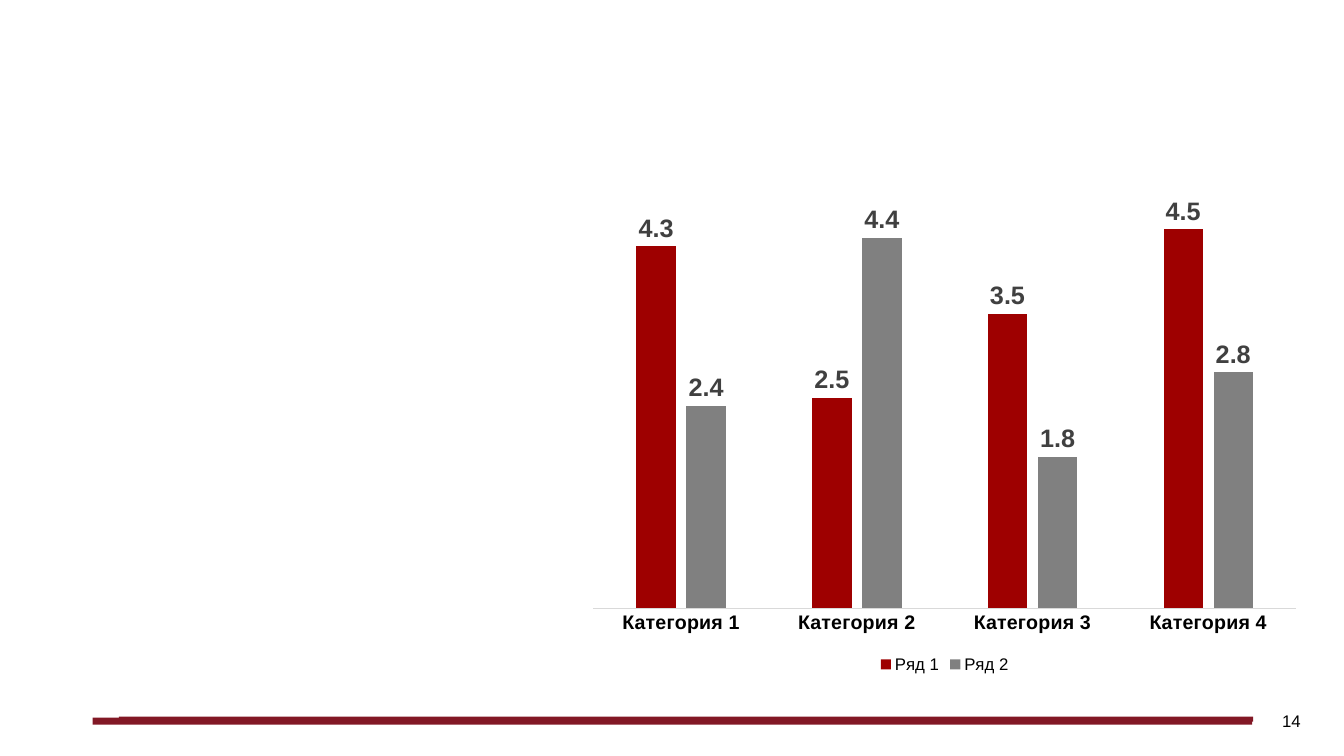
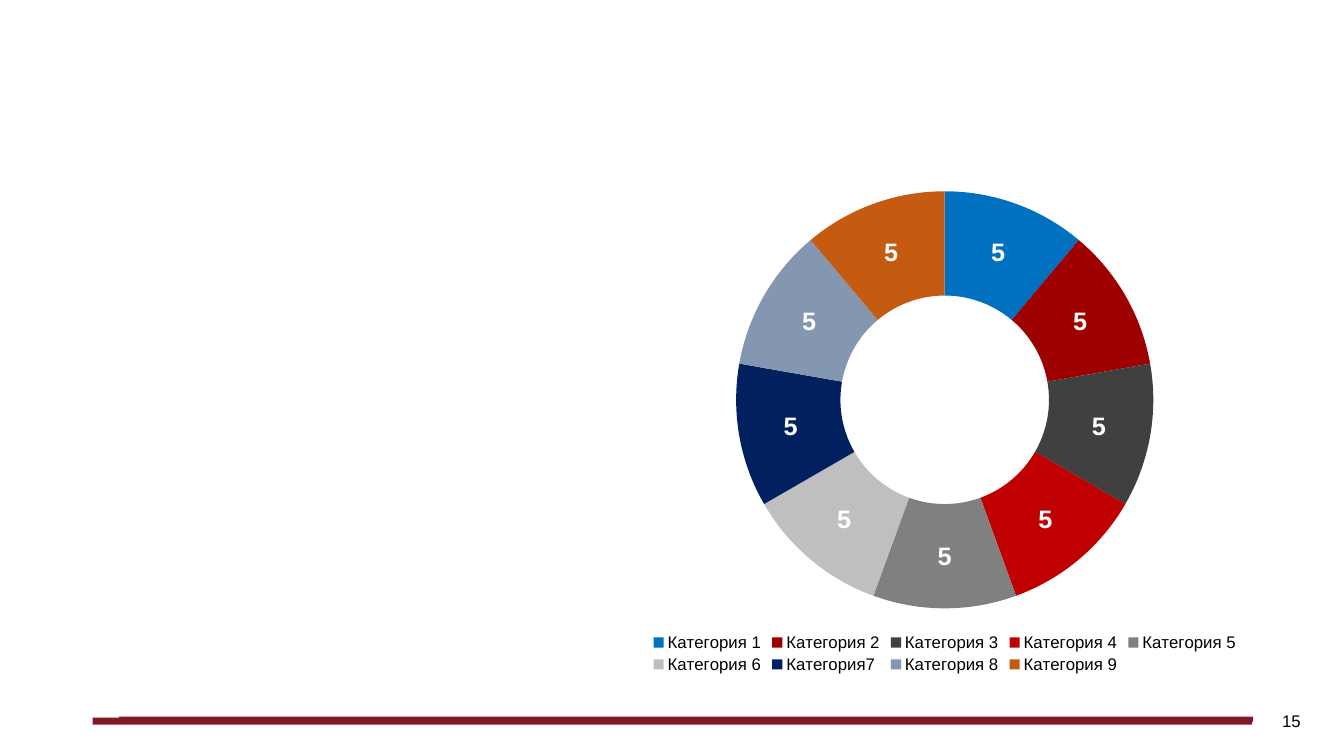
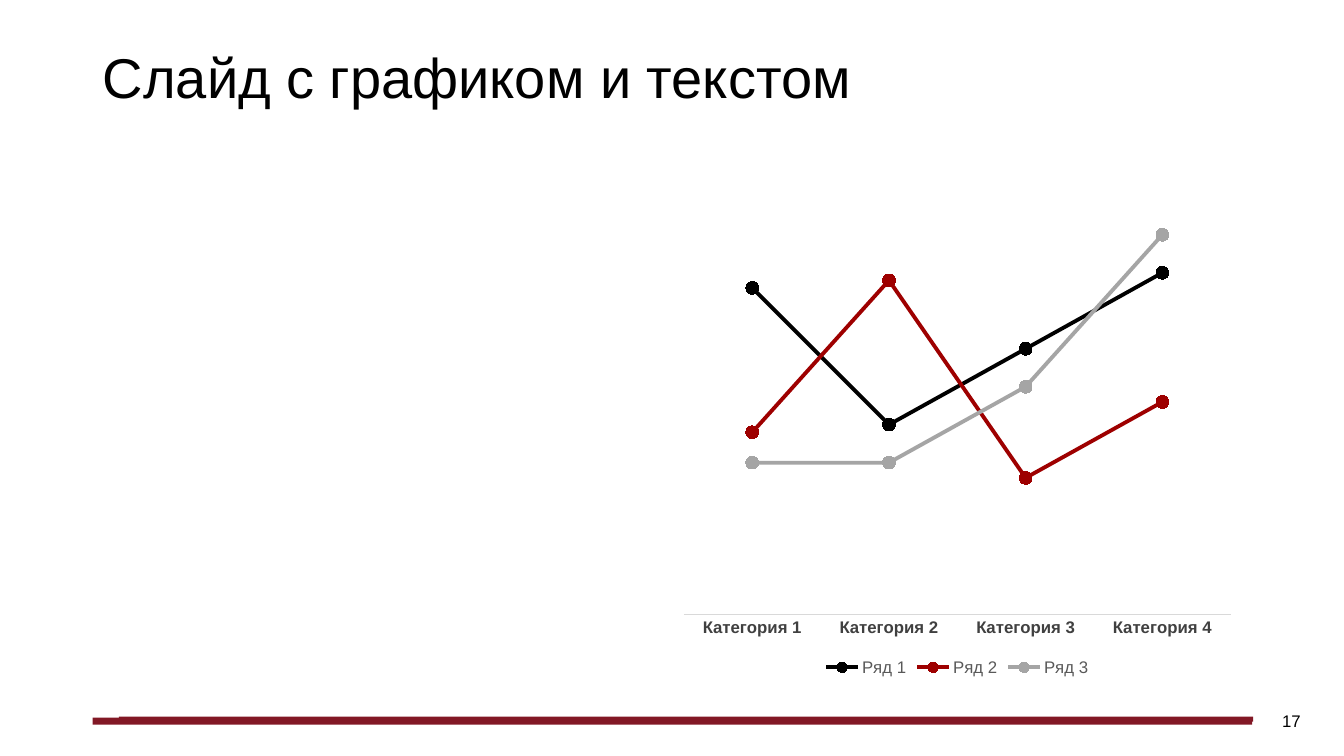
from pptx import Presentation
from pptx.chart.data import CategoryChartData
from pptx.dml.color import RGBColor
from pptx.enum.chart import XL_CHART_TYPE, XL_LEGEND_POSITION, XL_MARKER_STYLE, XL_TICK_MARK
from pptx.enum.shapes import MSO_SHAPE
from pptx.enum.text import MSO_ANCHOR, MSO_AUTO_SIZE, PP_ALIGN
from pptx.util import Inches, Pt

COLUMN = XL_CHART_TYPE.COLUMN_CLUSTERED
DOUGHNUT = XL_CHART_TYPE.DOUGHNUT
LINE = XL_CHART_TYPE.LINE_MARKERS
BOTTOM = XL_LEGEND_POSITION.BOTTOM
CIRCLE = XL_MARKER_STYLE.CIRCLE
NO_TICK = XL_TICK_MARK.NONE
RECTANGLE = MSO_SHAPE.RECTANGLE
MIDDLE = MSO_ANCHOR.MIDDLE
NO_AUTOFIT = MSO_AUTO_SIZE.NONE
LEFT, RIGHT = PP_ALIGN.LEFT, PP_ALIGN.RIGHT

FONT = "Arial"
BLACK, WHITE, DARK, GRAY = "000000", "FFFFFF", "404040", "808080"
BAND, CRIMSON, AXIS_LINE = "821825", "9E0000", "D9D9D9"

TITLE_ONLY, BLANK = 5, 6
BANDS = [(1.18, 7.11, 11.25, 0.05), (0.92, 7.12, 11.5, 0.07)]
RIGHT_HALF = (5.74, 1.76, 7.26, 4.96)
CATEGORIES = [f"Категория {number}" for number in range(1, 5)]
RING_CATEGORIES = CATEGORIES + ["Категория 5", "Категория 6", "Категория7",
                                "Категория 8", "Категория 9"]
RING_COLORS = ["0070C0", CRIMSON, DARK, "C00000", GRAY, "BFBFBF",
               "002060", "8497B0", "C55A11"]

# One entry per slide; each series is name, values, colour
SLIDES = [
    dict(number=14, title=None, kind=COLUMN, box=RIGHT_HALF, categories=CATEGORIES,
         series=[("Ряд 1", (4.3, 2.5, 3.5, 4.5), CRIMSON),
                 ("Ряд 2", (2.4, 4.4, 1.8, 2.8), GRAY)],
         legend_color=BLACK, label_color=DARK, axis_size=14, axis_color=BLACK, maximum=5),
    dict(number=15, title=None, kind=DOUGHNUT, box=RIGHT_HALF, categories=RING_CATEGORIES,
         series=[("Series 1", (5,) * 9, None)],
         legend_color=BLACK, label_color=WHITE),
    dict(number=17, title="Слайд с графиком и текстом", kind=LINE,
         box=(6.67, 1.47, 5.65, 5.28), categories=CATEGORIES,
         series=[("Ряд 1", (86, 50, 70, 90), BLACK),
                 ("Ряд 2", (48, 88, 36, 56), CRIMSON),
                 ("Ряд 3", (40, 40, 60, 100), "A5A5A5")],
         legend_color="595959", axis_size=12, axis_color=DARK, maximum=120),
]


def paint(fill, color):
    fill.solid()
    fill.fore_color.rgb = RGBColor.from_string(color)


def style_font(font, size, color, bold=False):
    font.name, font.size, font.bold = FONT, Pt(size), bold
    font.color.rgb = RGBColor.from_string(color)


presentation = Presentation()
presentation.slide_width, presentation.slide_height = Inches(13.33), Inches(7.5)
master = presentation.slide_master

for page in SLIDES:
    layout = presentation.slide_layouts[TITLE_ONLY if page["title"] else BLANK]
    slide = presentation.slides.add_slide(layout)

    # Footer bands: drawn once and moved to the master, which every slide shows
    if page is SLIDES[0]:
        for box in BANDS:
            band = slide.shapes.add_shape(RECTANGLE, *map(Inches, box))
            band.shadow.inherit = False
            paint(band.fill, BAND)
            band.line.fill.background()
            master.shapes.element.append(band.element)

    # Title
    if page["title"]:
        title = slide.shapes.title
        title.left, title.top, title.width, title.height = map(Inches, (0.92, 0.4, 12.08, 0.8))
        title.text_frame.text = page["title"]
        title.text_frame.auto_size = NO_AUTOFIT
        title.text_frame.vertical_anchor = MIDDLE
        paragraph = title.text_frame.paragraphs[0]
        paragraph.alignment, paragraph.line_spacing = LEFT, 0.9
        style_font(paragraph.runs[0].font, 40, BLACK)

    # Page number
    number_box = slide.shapes.add_textbox(*map(Inches, (10, 6.95, 3, 0.4)))
    number_box.text_frame.word_wrap = True
    number_box.text_frame.vertical_anchor = MIDDLE
    number_box.text_frame.text = str(page["number"])
    paragraph = number_box.text_frame.paragraphs[0]
    paragraph.alignment = RIGHT
    style_font(paragraph.runs[0].font, 12, BLACK)

    # Chart and legend
    data = CategoryChartData()
    data.categories = page["categories"]
    for name, values, color in page["series"]:
        data.add_series(name, values)
    kind = page["kind"]
    chart = slide.shapes.add_chart(kind, *map(Inches, page["box"]), data).chart
    style_font(chart.font, 10, BLACK)
    chart.has_title = False
    chart.has_legend = True
    chart.legend.position = BOTTOM
    chart.legend.include_in_layout = False
    style_font(chart.legend.font, 12, page["legend_color"])
    plot = chart.plots[0]
    plot.vary_by_categories = kind == DOUGHNUT

    # Axes
    if kind != DOUGHNUT:
        chart.value_axis.visible = False
        chart.value_axis.has_major_gridlines = False
        chart.value_axis.minimum_scale = 0
        chart.value_axis.maximum_scale = page["maximum"]
        axis = chart.category_axis
        axis.major_tick_mark = axis.minor_tick_mark = NO_TICK
        paint(axis.format.line.fill, AXIS_LINE)
        axis.format.line.width = Pt(0.75)
        style_font(axis.tick_labels.font, page["axis_size"], page["axis_color"], bold=True)
    if kind == COLUMN:
        plot.gap_width, plot.overlap = 219, -27

    # Series colours and value labels
    for series, (name, values, color) in zip(plot.series, page["series"]):
        if kind == LINE:
            series.smooth = False
            paint(series.format.line.fill, color)
            series.format.line.width = Pt(2.75)
            series.marker.style, series.marker.size = CIRCLE, 9
            paint(series.marker.format.fill, color)
            paint(series.marker.format.line.fill, color)
            continue
        if kind == DOUGHNUT:
            for index, ring_color in enumerate(RING_COLORS):
                point = series.points[index]
                paint(point.format.fill, ring_color)
                point.format.line.fill.background()
        else:
            paint(series.format.fill, color)
        series.data_labels.show_value = True
        style_font(series.data_labels.font, 18, page["label_color"], bold=True)

presentation.save("out.pptx")
